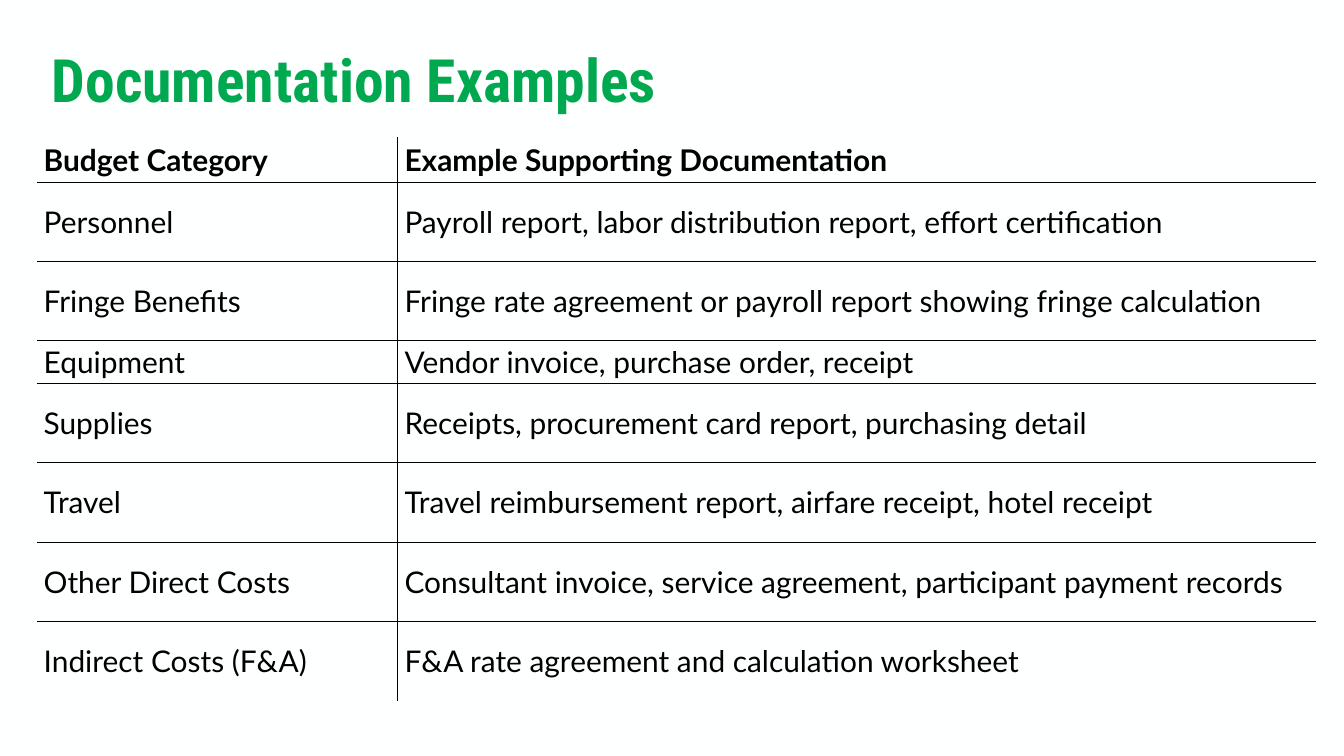
from lxml import etree
from pptx import Presentation
from pptx.dml.color import RGBColor
from pptx.enum.text import MSO_ANCHOR, MSO_AUTO_SIZE, PP_ALIGN
from pptx.oxml.ns import qn
from pptx.util import Inches, Pt

MIDDLE, TOP = MSO_ANCHOR.MIDDLE, MSO_ANCHOR.TOP
LEFT = PP_ALIGN.LEFT
NO_AUTO_SIZE = MSO_AUTO_SIZE.NONE
GREEN = RGBColor(0x00, 0xA9, 0x50)
BLACK = RGBColor(0x00, 0x00, 0x00)
PAPER = RGBColor(0xFE, 0xFF, 0xFF)

TITLE = "Documentation Examples"
ROWS = [
    ("Budget Category", "Example Supporting Documentation"),
    ("Personnel", "Payroll report, labor distribution report, effort certification"),
    ("Fringe Benefits", "Fringe rate agreement or payroll report showing fringe calculation"),
    ("Equipment", "Vendor invoice, purchase order, receipt"),
    ("Supplies", "Receipts, procurement card report, purchasing detail"),
    ("Travel", "Travel reimbursement report, airfare receipt, hotel receipt"),
    ("Other Direct Costs", "Consultant invoice, service agreement, participant payment records"),
    ("Indirect Costs (F&A)", "F&A rate agreement and calculation worksheet"),
]
COLUMN_WIDTHS = [5.37, 13.67]
BODY_HEIGHT = 1.18
SPECIAL_HEIGHTS = {0: 0.67, 3: 0.62}


def add_run(paragraph, text, font, size, color, bold):
    run = paragraph.add_run()
    run.text = text
    run.font.name = font
    run.font.size = Pt(size)
    run.font.bold = bold
    run.font.color.rgb = color


def set_borders(cell, visible_sides):
    properties = cell._tc.get_or_add_tcPr()
    for index, side in enumerate("LRTB"):
        line = etree.Element(qn(f"a:ln{side}"), w=str(Pt(1)))
        if side in visible_sides:
            fill = etree.SubElement(line, qn("a:solidFill"))
            etree.SubElement(fill, qn("a:srgbClr"), val=str(BLACK))
        else:
            etree.SubElement(line, qn("a:noFill"))
        properties.insert(index, line)


def add_title(slide):
    title = slide.shapes.title
    title.left, title.top = Inches(0.77), Inches(0.46)
    title.width, title.height = Inches(17.43), Inches(1.17)
    frame = title.text_frame
    frame.margin_left = frame.margin_right = 0
    frame.margin_top = frame.margin_bottom = 0
    frame.word_wrap = True
    frame.auto_size = NO_AUTO_SIZE
    frame.vertical_anchor = TOP
    paragraph = frame.paragraphs[0]
    paragraph.alignment = LEFT
    paragraph.line_spacing = Pt(89.6)
    paragraph.space_before = Pt(0)
    add_run(paragraph, TITLE, "Roboto Condensed", 64, GREEN, True)


def add_documentation_table(slide):
    heights = [SPECIAL_HEIGHTS.get(row, BODY_HEIGHT) for row in range(len(ROWS))]
    table = slide.shapes.add_table(
        len(ROWS), len(COLUMN_WIDTHS), Inches(0.55), Inches(2.04),
        Inches(sum(COLUMN_WIDTHS)), Inches(sum(heights)),
    ).table
    table.first_row = table.horz_banding = False
    for column, width in zip(table.columns, COLUMN_WIDTHS):
        column.width = Inches(width)
    for row, height in zip(table.rows, heights):
        row.height = Inches(height)

    last_row, last_column = len(ROWS) - 1, len(COLUMN_WIDTHS) - 1
    for row, texts in enumerate(ROWS):
        for column, text in enumerate(texts):
            cell = table.cell(row, column)
            cell.fill.background()
            cell.vertical_anchor = MIDDLE
            inner = {"L": column > 0, "R": column < last_column,
                     "T": row > 0, "B": row < last_row}
            set_borders(cell, [side for side in inner if inner[side]])
            add_run(cell.text_frame.paragraphs[0], text, "Lato", 32, BLACK, row == 0)


def main():
    presentation = Presentation()
    presentation.slide_width = Inches(20)
    presentation.slide_height = Inches(11.25)
    slide = presentation.slides.add_slide(presentation.slide_layouts[5])
    slide.background.fill.solid()
    slide.background.fill.fore_color.rgb = PAPER
    add_title(slide)
    add_documentation_table(slide)
    presentation.save("out.pptx")


if __name__ == "__main__":
    main()
